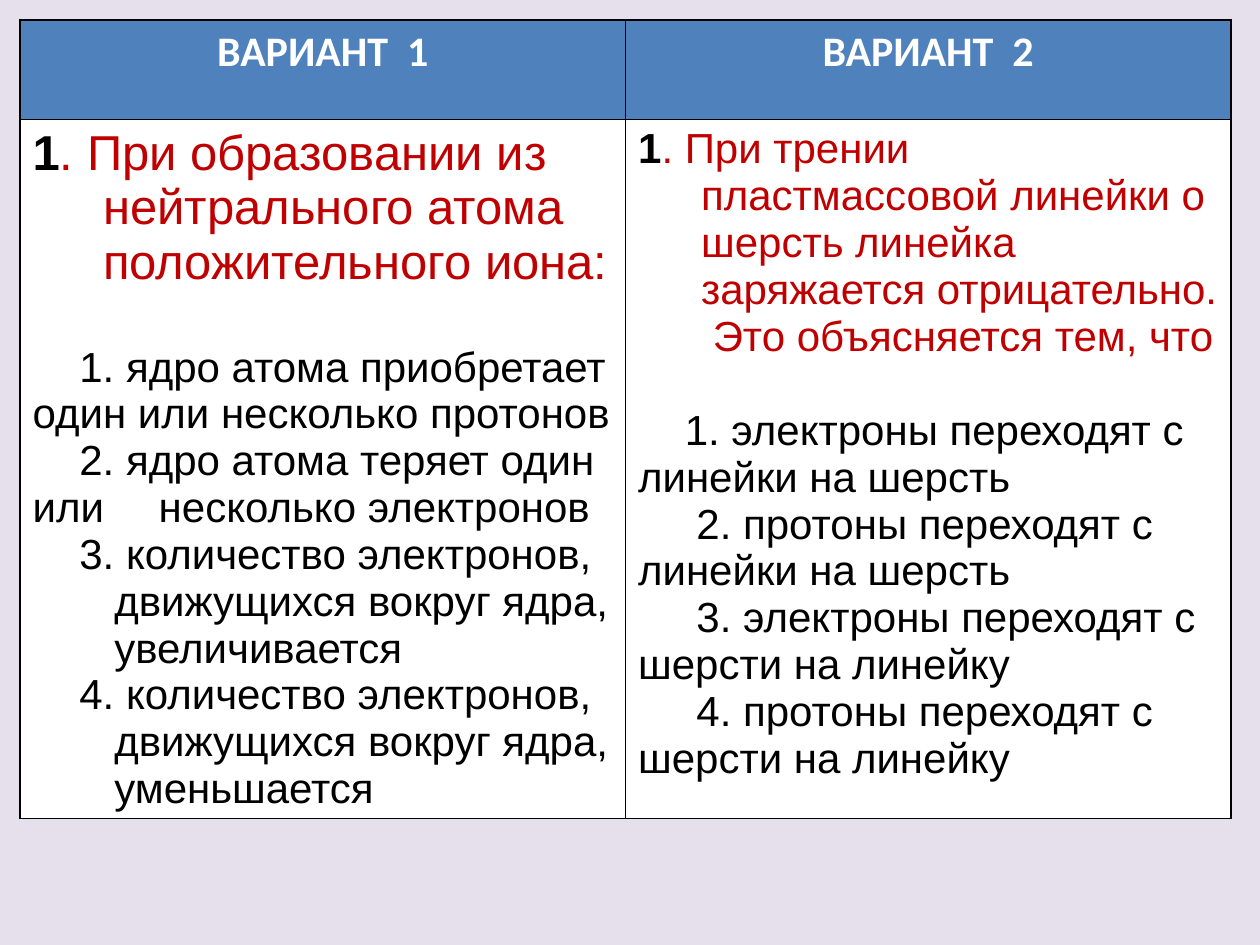
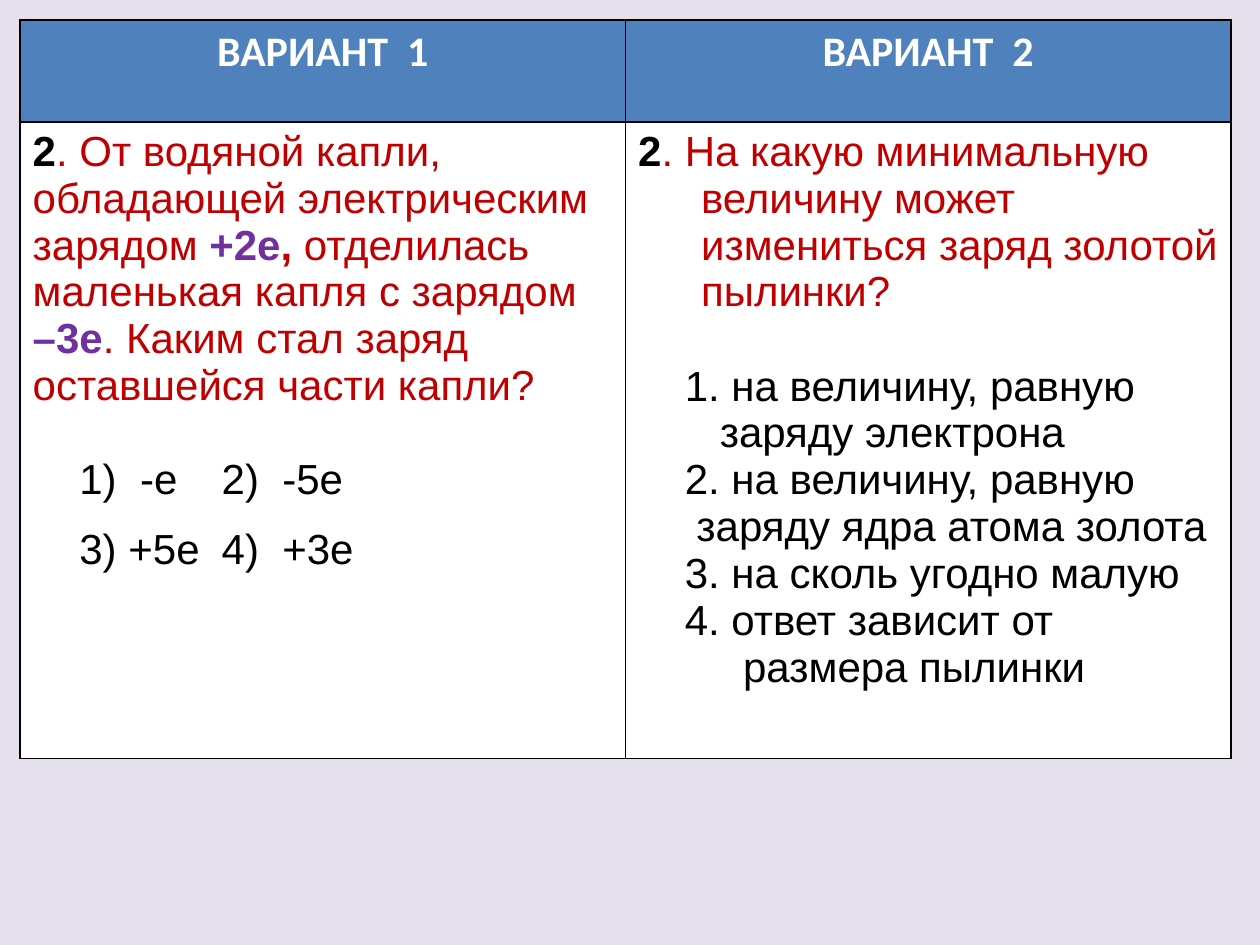
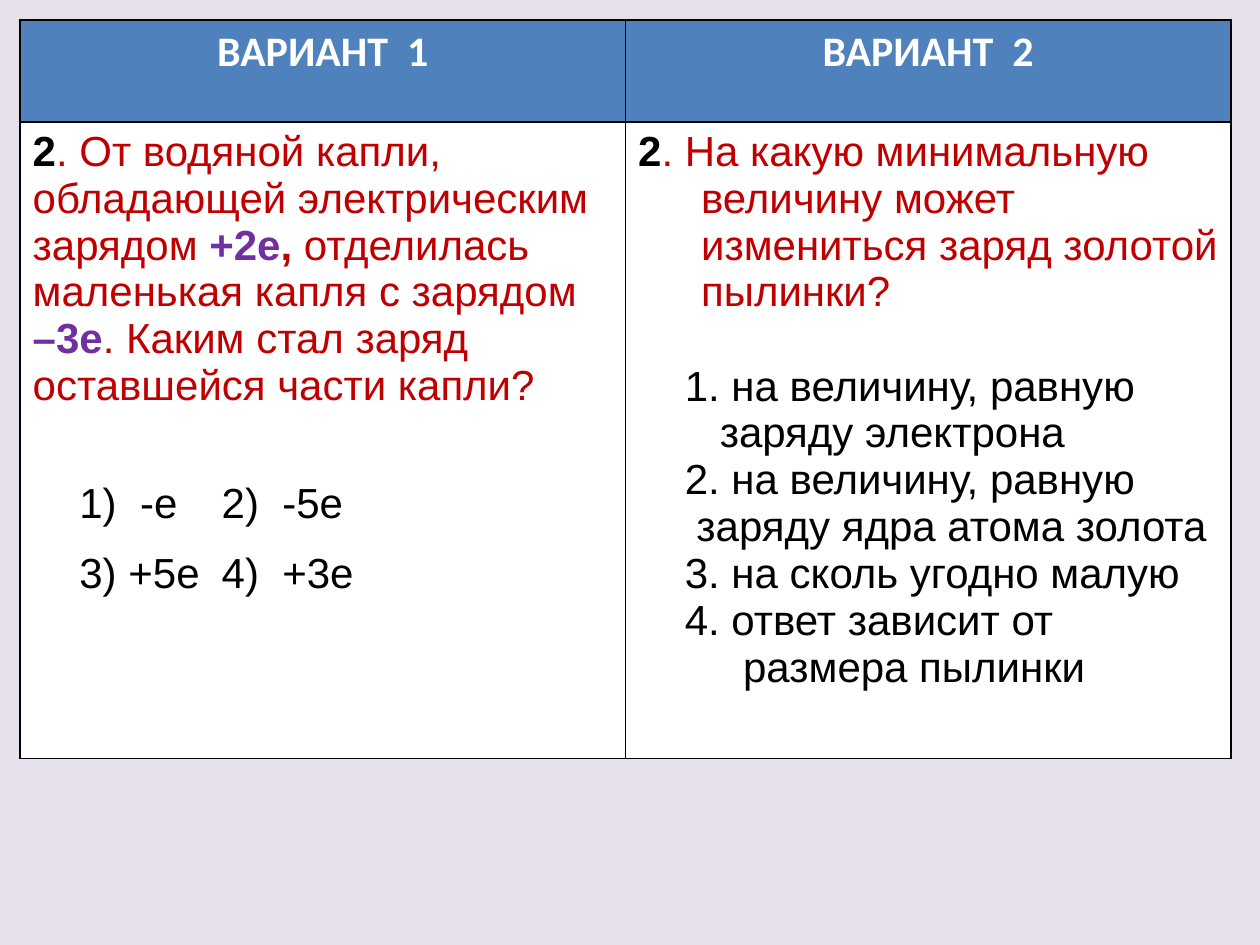
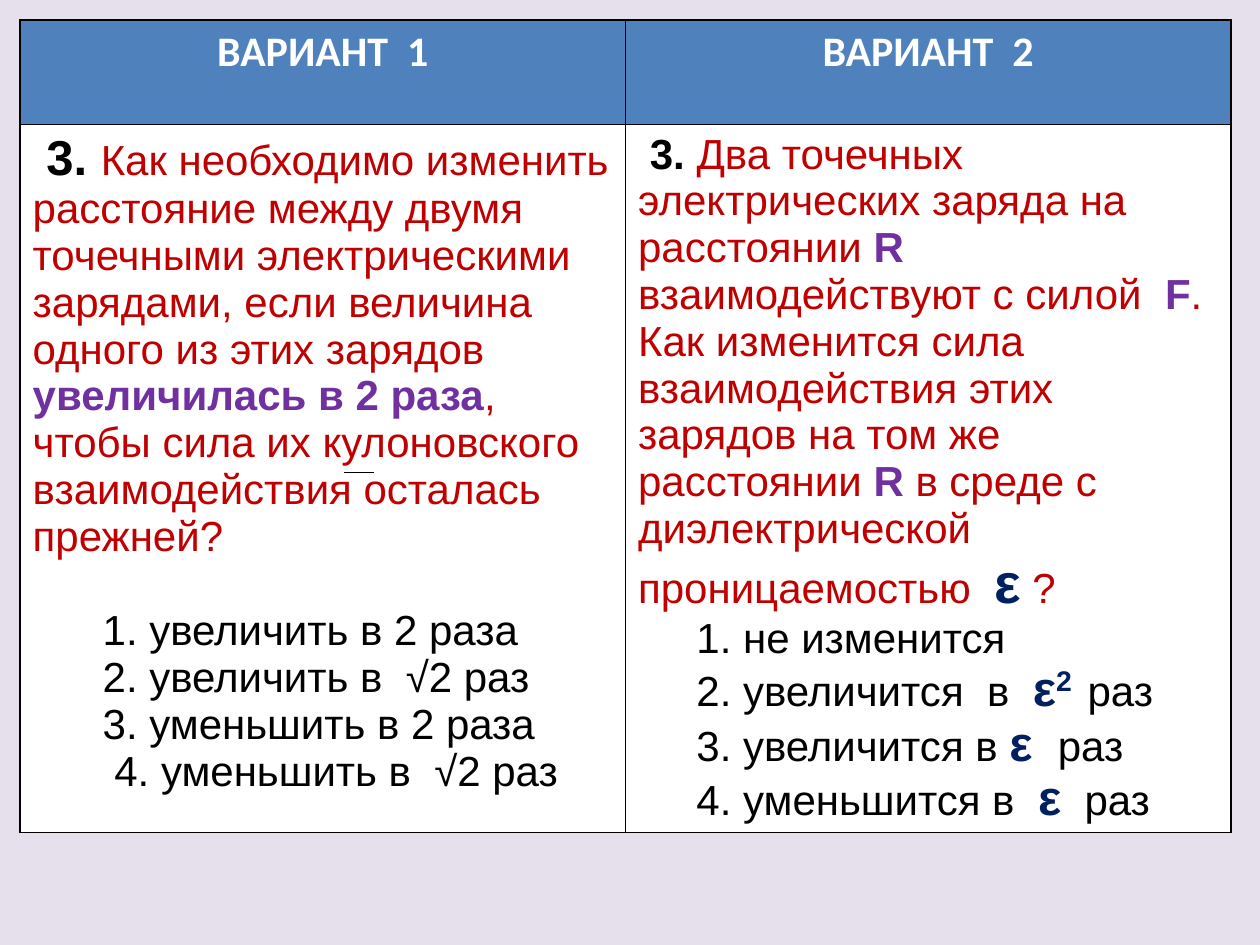
from lxml import etree
from pptx import Presentation
from pptx import util as u
from pptx.dml.color import RGBColor
from pptx.enum import shapes, text
from pptx.oxml import ns

COLORS = {
    "page": "E6E0EC",
    "header": "4F81BD",
    "white": "FFFFFF",
    "black": "000000",
    "red": "C00000",
    "purple": "7030A0",
    "navy": "002060",
}
STYLES = {
    "header": ("Calibri", "white", True),
    "number": ("Arial", "black", True),
    "question": ("Arial", "red", False),
    "key": ("Arial", "purple", True),
    "comma": ("Arial", "red", True),
    "answer": ("Arial", "black", False),
    "epsilon": ("Arial", "navy", True),
    "power": ("Arial", "navy", True),
}
HEADERS = ("ВАРИАНТ  1", "ВАРИАНТ  2")
TABLE_BOX = (0.16, 0.16, 9.61)
BASE_SIZE = 24
SPACE = 0.0926
BLANK_LINE = 27


def rgb(name):
    return RGBColor.from_string(COLORS[name])


def para(*runs, **layout):
    return runs, layout


def answer(content, spaces, **layout):
    runs = [(content, "answer")] if isinstance(content, str) else content
    return para(*runs, first=spaces * SPACE, **layout)


def answers(lines, gap=BLANK_LINE):
    first, *rest = lines
    return [answer(*first, before=gap)] + [answer(*line) for line in rest]


def add_run(p, content, style, size=BASE_SIZE):
    font, color, bold = STYLES[style]
    r = p.add_run()
    r.text = content
    r.font.name = font
    r.font.size = u.Pt(size)
    r.font.bold = bold
    r.font.color.rgb = rgb(color)
    if style == "power":
        r.font._element.set("baseline", "30000")


def format_paragraph(p, left=0, first=0, before=0, spacing=None, tab=None):
    p.space_before = u.Pt(before)
    if spacing:
        p.line_spacing = spacing
    pPr = p._p.get_or_add_pPr()
    pPr.set("marL", str(u.Inches(left)))
    pPr.set("indent", str(u.Inches(first)))
    if tab:
        tabs = etree.SubElement(pPr, ns.qn("a:tabLst"))
        etree.SubElement(tabs, ns.qn("a:tab"), pos=str(u.Inches(tab)), algn="l")


def frame_cell(cell, fill):
    tcPr = cell._tc.get_or_add_tcPr()
    for side in ("a:lnL", "a:lnR", "a:lnT", "a:lnB"):
        line = etree.SubElement(tcPr, ns.qn(side), w=str(u.Pt(1)))
        solid = etree.SubElement(line, ns.qn("a:solidFill"))
        etree.SubElement(solid, ns.qn("a:srgbClr"), val=COLORS["black"])
    cell.fill.solid()
    cell.fill.fore_color.rgb = rgb(fill)


def fill_header(cell, label):
    frame_cell(cell, "header")
    p = cell.text_frame.paragraphs[0]
    p.alignment = text.PP_ALIGN.CENTER
    add_run(p, label, "header")


def fill_question(cell, paragraphs):
    frame_cell(cell, "white")
    tf = cell.text_frame
    for i, (runs, layout) in enumerate(paragraphs):
        p = tf.add_paragraph() if i else tf.paragraphs[0]
        format_paragraph(p, **layout)
        for run in runs:
            add_run(p, *run)


def add_variants(slide, box, heights, variants):
    left, top, width = box
    gf = slide.shapes.add_table(
        2, 2, u.Inches(left), u.Inches(top), u.Inches(width), u.Inches(sum(heights))
    )
    table = gf.table
    table.horz_banding = False
    for row, height in zip(table.rows, heights):
        row.height = u.Inches(height)
    for col, (label, paragraphs) in enumerate(zip(HEADERS, variants)):
        table.columns[col].width = u.Inches(width / 2)
        fill_header(table.cell(0, col), label)
        fill_question(table.cell(1, col), paragraphs)


def add_root_bar(slide, left, top, width):
    bar = slide.shapes.add_connector(
        shapes.MSO_CONNECTOR.STRAIGHT,
        u.Inches(left), u.Inches(top), u.Inches(left + width), u.Inches(top),
    )
    bar.line.color.rgb = rgb("black")
    bar.line.width = u.Pt(0.75)
    etree.SubElement(bar._element.spPr, ns.qn("a:effectLst"))


def add_question_slide(prs, heights, variants):
    slide = prs.slides.add_slide(prs.slide_layouts[6])
    slide.background.fill.solid()
    slide.background.fill.fore_color.rgb = rgb("page")
    add_variants(slide, TABLE_BOX, heights, variants)
    return slide


def ion_question():
    return [
        para(
            ("1", "number", 28),
            (". При образовании из нейтрального атома положительного иона:", "question", 28),
            left=0.56, first=-0.56,
        ),
        answer("1. ядро атома приобретает один или несколько протонов", 4, before=31),
        answer("2. ядро атома теряет один или\tнесколько электронов", 4, tab=0.93),
        answer("3. количество электронов,", 4),
        answer("движущихся вокруг ядра,", 7),
        answer("увеличивается", 7),
        answer("4. количество электронов,", 4),
        answer("движущихся вокруг ядра,", 7),
        answer("уменьшается", 7),
    ]


def ruler_question():
    return [
        para(
            ("1", "number"),
            (". При трении пластмассовой линейки о шерсть линейка заряжается "
             "отрицательно.  Это объясняется тем, что", "question"),
            left=0.5, first=-0.5,
        ),
        *answers([
            ("1. электроны переходят с линейки на шерсть", 4),
            ("2. протоны переходят с линейки на шерсть", 5),
            ("3. электроны переходят с шерсти на линейку", 5),
            ("4. протоны переходят с шерсти на линейку", 5),
        ]),
    ]


def drop_question(first_spacing):
    return [
        para(
            ("2", "number"),
            (". От водяной капли, обладающей электрическим зарядом ", "question"),
            ("+2е", "key"),
            (", ", "comma"),
            ("отделилась маленькая капля с зарядом  ", "question"),
            ("–3е", "key"),
            (". Каким стал заряд оставшейся части капли?", "question"),
        ),
        answer("1)  -е\t2)  -5е", 4, before=BLANK_LINE, spacing=first_spacing, tab=2.34),
        answer("3) +5е\t4)  +3е", 4, spacing=1.5, tab=2.34),
    ]


def dust_question():
    return [
        para(
            ("2", "number"),
            (". На какую минимальную величину может измениться заряд золотой пылинки?",
             "question"),
            left=0.5, first=-0.5,
        ),
        *answers([
            ("1. на величину, равную", 4),
            ("заряду электрона", 7),
            ("2. на величину, равную", 4),
            ("заряду ядра атома золота", 5),
            ("3. на сколь угодно малую", 4),
            ("4. ответ зависит от", 4),
            ("размера пылинки", 9),
        ]),
    ]


def distance_question():
    return [
        para(
            (" 3. ", "number", 28),
            ("Как необходимо изменить расстояние между двумя точечными электрическими "
             "зарядами, если величина одного из этих зарядов ", "question"),
            ("увеличилась в 2 раза", "key"),
            (", чтобы сила их кулоновского взаимодействия осталась прежней?", "question"),
        ),
        *answers([
            ("1. увеличить в 2 раза", 6),
            ("2. увеличить в  √2 раз", 6),
            ("3. уменьшить в 2 раза", 6),
            ("4. уменьшить в  √2 раз", 7),
        ]),
    ]


def medium_question():
    return [
        para(
            (" 3. ", "number"),
            ("Два точечных электрических заряда на расстоянии ", "question"),
            ("R ", "key"),
            ("взаимодействуют с силой  ", "question"),
            ("F", "key"),
            (". Как изменится сила взаимодействия этих зарядов на том же расстоянии ",
             "question"),
            ("R ", "key"),
            ("в среде с диэлектрической проницаемостью  ", "question"),
            ("ε", "epsilon", 32),
            (" ?", "question"),
        ),
        *answers([
            ("1. не изменится", 5),
            ([("2. увеличится  в  ", "answer"), ("ε", "epsilon", 28),
              ("2  ", "power", 28), ("раз", "answer")], 5),
            ([("3. увеличится в ", "answer"), ("ε ", "epsilon", 28), (" раз", "answer")], 5),
            ([("4. уменьшится в  ", "answer"), ("ε", "epsilon", 28), ("  раз", "answer")], 5),
        ], gap=0),
    ]


def main():
    prs = Presentation()
    prs.slide_width = u.Inches(10)
    prs.slide_height = u.Inches(7.5)
    add_question_slide(prs, (0.79, 5.3), (ion_question(), ruler_question()))
    for first_spacing in (None, 1.5):
        add_question_slide(prs, (0.81, 5.05), (drop_question(first_spacing), dust_question()))
    slide = add_question_slide(prs, (0.83, 5.58), (distance_question(), medium_question()))
    add_root_bar(slide, 2.73, 3.75, 0.24)
    prs.save("out.pptx")


if __name__ == "__main__":
    main()
